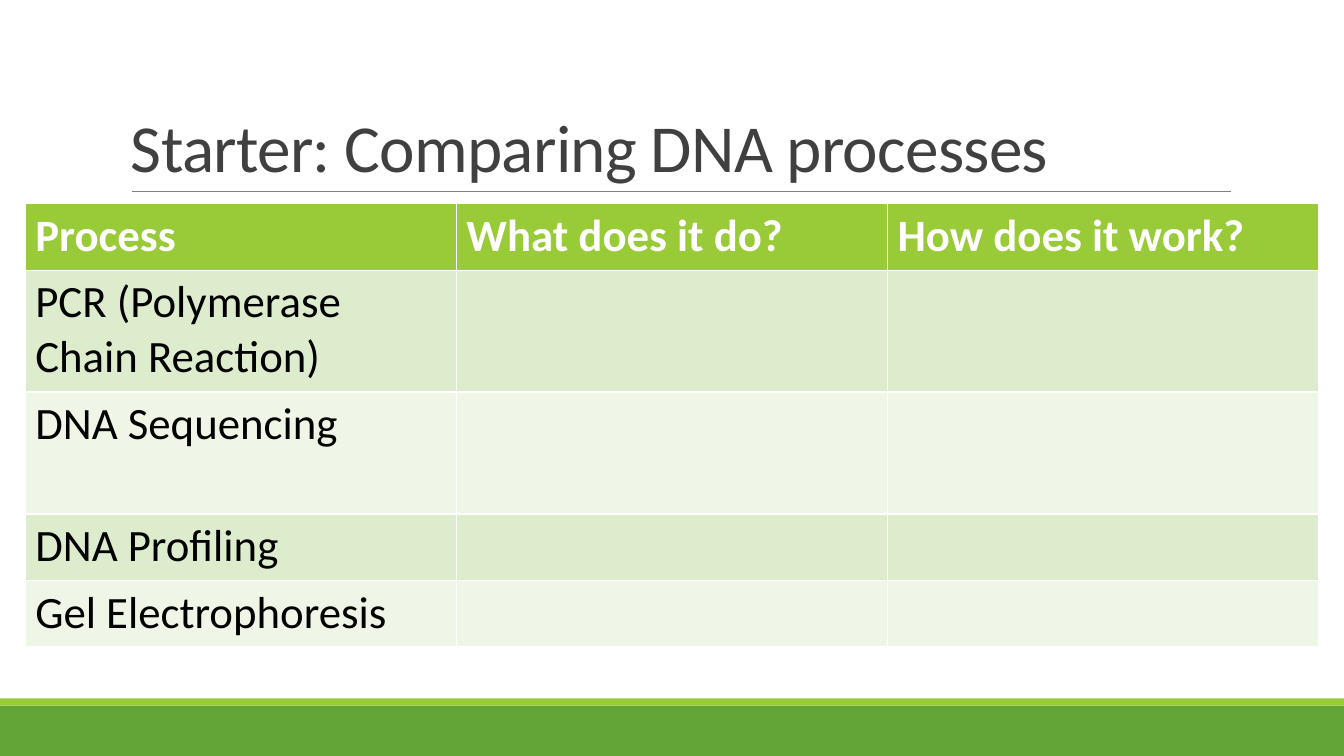
from pptx import Presentation
from pptx.dml.color import RGBColor
from pptx.enum.shapes import MSO_CONNECTOR, MSO_SHAPE
from pptx.enum.text import MSO_ANCHOR
from pptx.oxml.ns import qn
from pptx.util import Inches, Pt
from lxml.etree import SubElement

COLORS = {
    "green": "63A537",
    "lime": "99CB38",
    "rule": "808080",
    "title": "404040",
    "white": "FFFFFF",
    "black": "000000",
    "band": "DEECCE",
    "pale": "EFF6E8",
}
HEADS = ["Process", "What does it do?", "How does it work?"]
TOPICS = [
    "PCR (Polymerase Chain Reaction)",
    "DNA Sequencing",
    "DNA Profiling",
    "Gel Electrophoresis",
]
HEIGHTS = [0.66, 1.21, 1.21, 0.66, 0.66]
WIDTH = 12.83


def color(name):
    return RGBColor.from_string(COLORS[name])


def style(font, size, tone, bold=False):
    values = {"name": "Calibri", "size": Pt(size), "bold": bold}
    for key, value in values.items():
        setattr(font, key, value)
    font.color.rgb = color(tone)


def add_bar(slide, top, height, tone):
    """Draw a full-width band at the foot of the slide."""
    bar = slide.shapes.add_shape(
        MSO_SHAPE.RECTANGLE, 0, Inches(top), Inches(13.33), Inches(height))
    bar.shadow.inherit = False
    bar.fill.solid()
    bar.fill.fore_color.rgb = color(tone)
    bar.line.fill.background()


def add_rule(slide):
    rule = slide.shapes.add_connector(
        MSO_CONNECTOR.STRAIGHT,
        Inches(1.31), Inches(1.9), Inches(12.21), Inches(1.9))
    rule.line.color.rgb = color("rule")
    rule.line.width = Pt(0.5)
    SubElement(rule._element.spPr, qn("a:effectLst"))


def add_title(slide, text):
    box = slide.shapes.add_textbox(
        Inches(1.2), Inches(0.31), Inches(11), Inches(1.59))
    frame = box.text_frame
    frame.word_wrap = True
    frame.vertical_anchor = MSO_ANCHOR.BOTTOM
    para = frame.paragraphs[0]
    para.line_spacing = 0.85
    run = para.add_run()
    run.text = text
    style(run.font, 48, "title")
    run._r.get_or_add_rPr().set("spc", "-50")


def add_grid(slide):
    """Add the table; its default style supplies the white borders."""
    table = slide.shapes.add_table(
        len(HEIGHTS), len(HEADS), Inches(0.25), Inches(2.02),
        Inches(WIDTH), Inches(sum(HEIGHTS))).table
    for col in table.columns:
        col.width = Inches(WIDTH / len(HEADS))
    rows = [HEADS] + [[topic, "", ""] for topic in TOPICS]
    for i, (texts, height) in enumerate(zip(rows, HEIGHTS)):
        table.rows[i].height = Inches(height)
        head = i == 0
        fill = "lime" if head else "band" if i % 2 else "pale"
        for j, text in enumerate(texts):
            cell = table.cell(i, j)
            cell.fill.solid()
            cell.fill.fore_color.rgb = color(fill)
            para = cell.text_frame.paragraphs[0]
            if text:
                run = para.add_run()
                run.text = text
                style(run.font, 32, "white" if head else "black", head)


def main():
    deck = Presentation()
    deck.slide_width = Inches(13.33)
    deck.slide_height = Inches(7.5)
    slide = deck.slides.add_slide(deck.slide_layouts[6])
    add_bar(slide, 7, 0.5, "green")
    add_bar(slide, 6.93, 0.07, "lime")
    add_rule(slide)
    add_title(slide, "Starter: Comparing DNA processes")
    add_grid(slide)
    deck.save("out.pptx")


if __name__ == "__main__":
    main()
